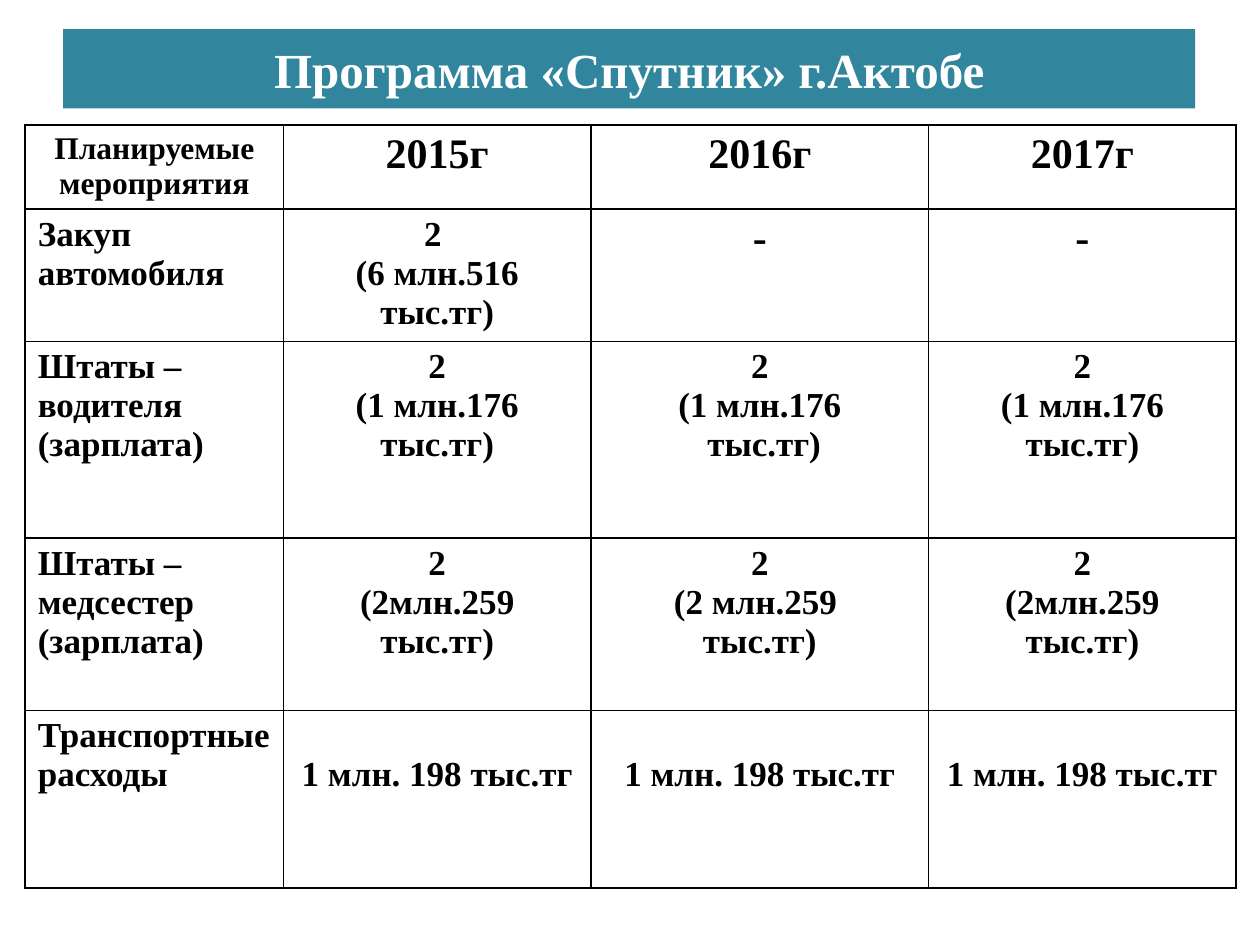
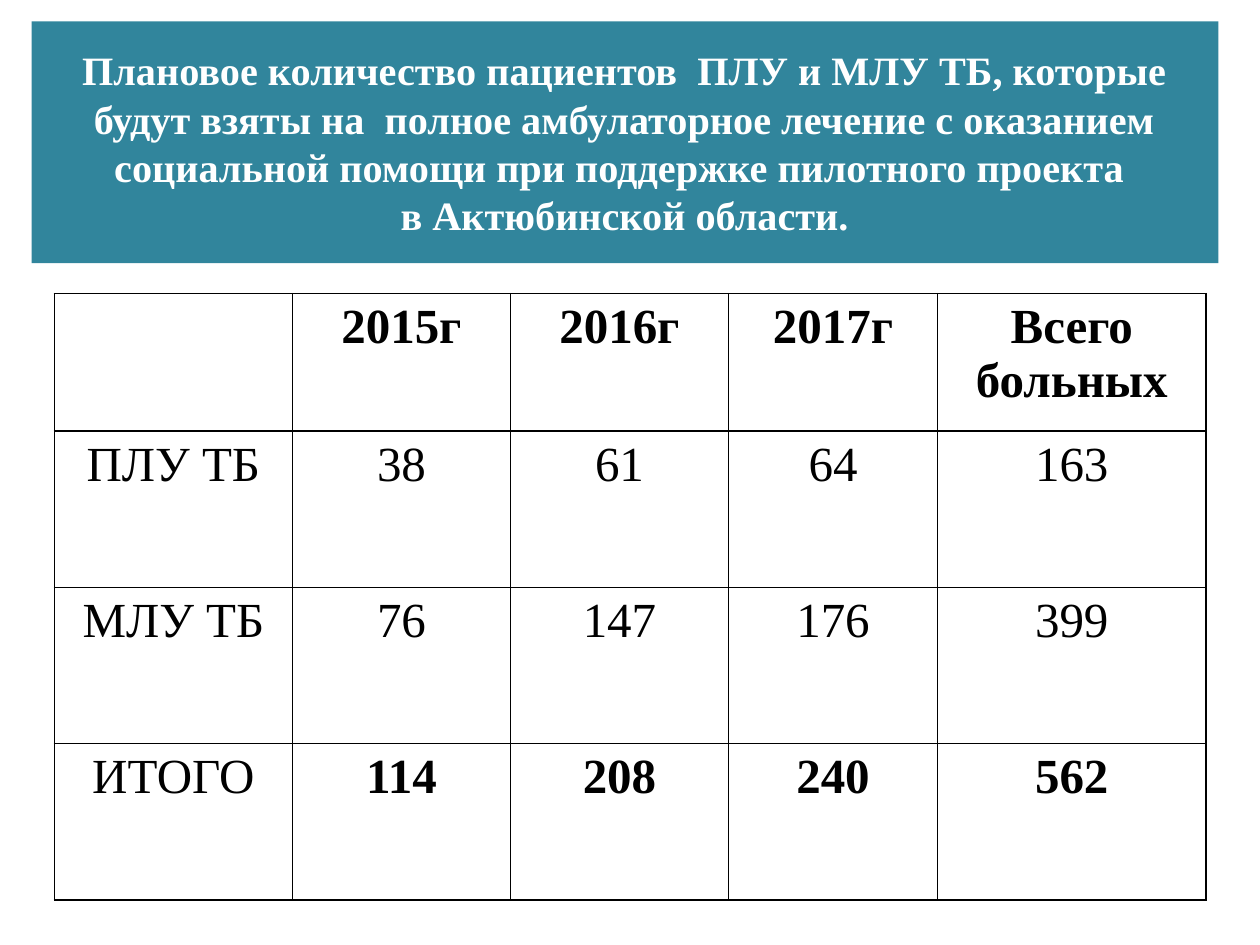
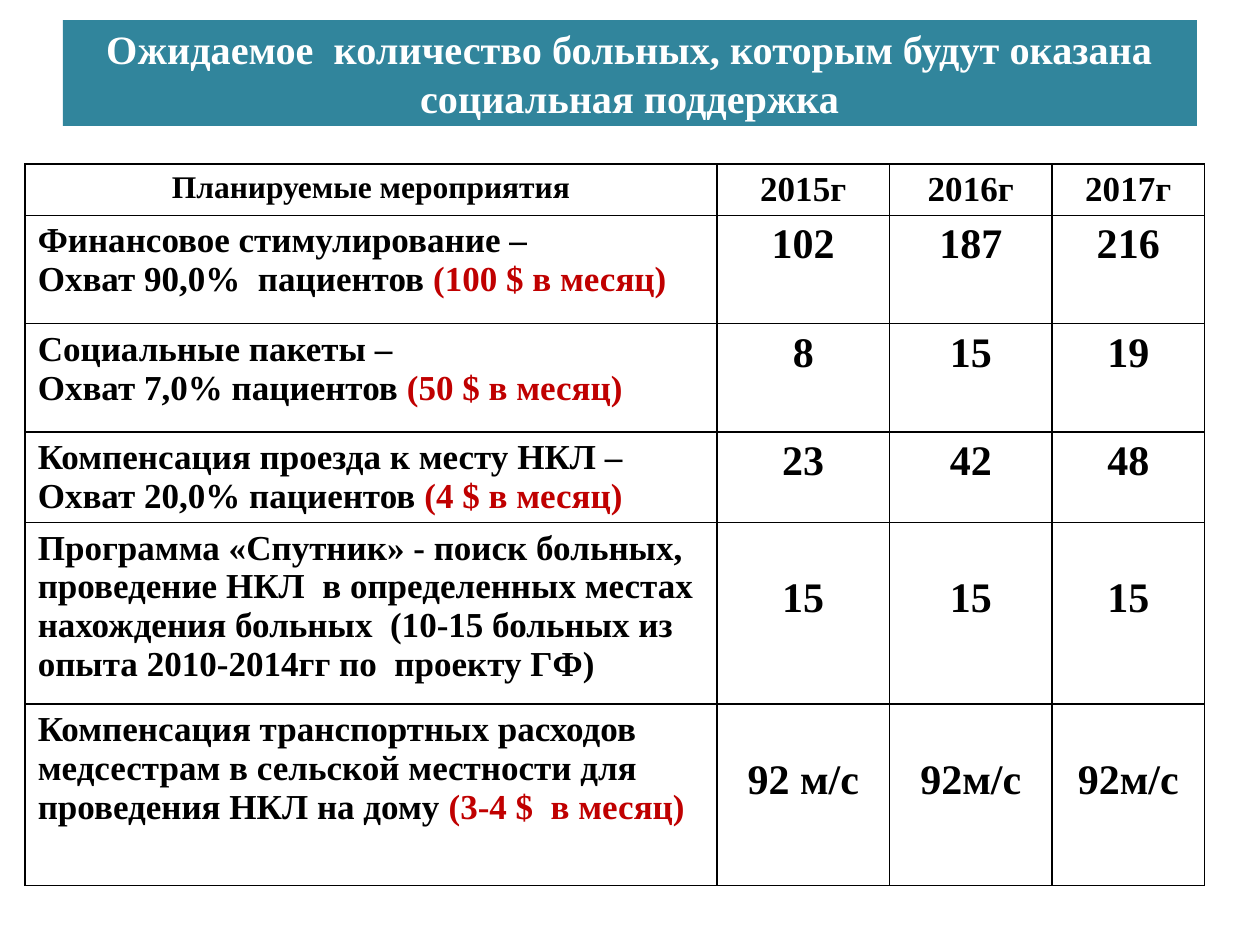
from dataclasses import dataclass

from lxml.etree import SubElement
from pptx import Presentation
from pptx.dml.color import RGBColor
from pptx.enum.shapes import MSO_SHAPE
from pptx.enum.text import MSO_ANCHOR, PP_ALIGN
from pptx.oxml.ns import qn
from pptx.util import Pt


# Theme
@dataclass(frozen=True)
class Theme:
    font: str = "Times New Roman"
    band: RGBColor = RGBColor(0x31, 0x85, 0x9C)
    title: RGBColor = RGBColor(0xFF, 0xFF, 0xFF)
    text: RGBColor = RGBColor(0, 0, 0)
    accent: RGBColor = RGBColor(0xC0, 0, 0)
    border: str = "000000"
    border_width: float = 1
    line_height: float = 1.11
    small: int = 18
    body: int = 20
    title_long: int = 23
    large: int = 24
    huge: int = 28


THEME = Theme()


# Slide parts
@dataclass(frozen=True)
class Box:
    left: float
    top: float
    width: float
    height: float


@dataclass(frozen=True)
class Band:
    text: str
    size: int
    box: Box


@dataclass(frozen=True)
class Cell:
    text: str
    size: int = THEME.body
    bold: bool = True
    align: PP_ALIGN = PP_ALIGN.CENTER
    accent: str = ""     # coloured ending of the last paragraph
    lowered: bool = False  # starts one line further down


@dataclass(frozen=True)
class Grid:
    left: float
    top: float
    cols: list[float]
    rows: list[float]
    cells: list[list[Cell]]


@dataclass(frozen=True)
class Page:
    band: Band
    grid: Grid


def label(text: str, accent: str = "") -> Cell:
    return Cell(text, align=PP_ALIGN.LEFT, accent=accent)


def row_of(*texts: str, size: int = THEME.body, bold: bool = True,
           lowered: bool = False) -> list[Cell]:
    return [Cell(t, size, bold, lowered=lowered) for t in texts]


# Drawing
def style_run(r, size: int, bold: bool, color: RGBColor) -> None:
    r.font.name = THEME.font
    r.font.size = Pt(size)
    r.font.bold = bold
    r.font.color.rgb = color


def draw_band(s, band: Band) -> None:
    b = band.box
    sp = s.shapes.add_shape(MSO_SHAPE.RECTANGLE, Pt(b.left), Pt(b.top),
                            Pt(b.width), Pt(b.height))
    sp.shadow.inherit = False
    sp.fill.solid()
    sp.fill.fore_color.rgb = THEME.band
    sp.line.fill.background()
    tf = sp.text_frame
    tf.word_wrap = True
    tf.vertical_anchor = MSO_ANCHOR.MIDDLE
    tf.text = band.text
    for p in tf.paragraphs:
        p.alignment = PP_ALIGN.CENTER
        for r in p.runs:
            style_run(r, band.size, True, THEME.title)


def draw_borders(cell) -> None:
    props = cell._tc.get_or_add_tcPr()
    for i, side in enumerate(("lnL", "lnR", "lnT", "lnB")):
        ln = props.makeelement(qn(f"a:{side}"), {"w": str(Pt(THEME.border_width))})
        fill = SubElement(ln, qn("a:solidFill"))
        SubElement(fill, qn("a:srgbClr"), val=THEME.border)
        props.insert(i, ln)


def draw_cell(cell, content: Cell) -> None:
    cell.fill.background()
    draw_borders(cell)
    if content.lowered:
        cell.margin_top += Pt(content.size * THEME.line_height)
    tf = cell.text_frame
    tf.text = content.text
    for p in tf.paragraphs:
        p.alignment = content.align
        for r in p.runs:
            style_run(r, content.size, content.bold, THEME.text)
    if content.accent:
        r = tf.paragraphs[-1].add_run()
        r.text = content.accent
        style_run(r, content.size, content.bold, THEME.accent)


def draw_grid(s, grid: Grid) -> None:
    frame = s.shapes.add_table(len(grid.rows), len(grid.cols), Pt(grid.left),
                               Pt(grid.top), Pt(sum(grid.cols)), Pt(sum(grid.rows)))
    table = frame.table
    for col, width in zip(table.columns, grid.cols):
        col.width = Pt(width)
    for row, height, contents in zip(table.rows, grid.rows, grid.cells):
        row.height = Pt(height)
        for cell, content in zip(row.cells, contents):
            draw_cell(cell, content)


# Content
YEARS = ("2015г", "2016г", "2017г")
ACTIVITIES = Cell("Планируемые мероприятия", THEME.small)

SPUTNIK = Page(
    Band("Программа «Спутник» г.Актобе", THEME.huge, Box(36, 16.6, 647, 45.4)),
    Grid(14.4, 71.3, [147.6, 175.7, 193, 175.7], [48.2, 75.6, 112.3, 98.6, 101.5], [
        [ACTIVITIES, *row_of(*YEARS, size=THEME.large)],
        [label("Закуп автомобиля"), Cell("2 \n(6 млн.516 тыс.тг)"),
         *row_of("-", "-", size=THEME.large)],
        [label("Штаты – водителя\n(зарплата)"),
         *row_of("2\n(1 млн.176 тыс.тг)", "2\n(1 млн.176\n тыс.тг)",
                 "2\n(1 млн.176 тыс.тг)")],
        [label("Штаты – медсестер\n(зарплата)"),
         *row_of("2\n(2млн.259\nтыс.тг)", "2\n(2 млн.259 \nтыс.тг)",
                 "2\n(2млн.259\nтыс.тг)")],
        [label("Транспортные расходы"),
         *row_of(*["1 млн. 198 тыс.тг"] * 3, lowered=True)],
    ]),
)

PATIENTS = Page(
    Band("Плановое количество пациентов  ПЛУ и МЛУ ТБ, которые будут взяты на  "
         "полное амбулаторное лечение с оказанием социальной помощи при поддержке "
         "пилотного проекта \vв Актюбинской области.",
         THEME.title_long, Box(18, 12.2, 678.2, 138.2)),
    Grid(31, 167.8, [136.1, 124.6, 124.6, 119.5, 153.4], [78.5] + [89.3] * 3, [
        row_of("", *YEARS, "Всего больных", size=THEME.huge),
        row_of("ПЛУ ТБ", "38", "61", "64", "163", size=THEME.huge, bold=False),
        row_of("МЛУ ТБ", "76", "147", "176", "399", size=THEME.huge, bold=False),
        [Cell("ИТОГО", THEME.huge, bold=False),
         *row_of("114", "208", "240", "562", size=THEME.huge)],
    ]),
)

SUPPORT = Page(
    Band("Ожидаемое  количество больных, которым будут оказана социальная поддержка",
         THEME.title_long, Box(36, 11.5, 648, 60.5)),
    Grid(14.4, 93.6, [395.3, 98.6, 92.9, 87.1],
         [26.6, 61.9, 61.9, 51.8, 103.7, 103.7], [
        [ACTIVITIES, *row_of(*YEARS)],
        [label("Финансовое стимулирование –\nОхват 90,0%  пациентов ",
               "(100 $ в месяц)"),
         *row_of("102", "187", "216", size=THEME.large)],
        [label("Cоциальные пакеты –\nОхват 7,0% пациентов ", "(50 $ в месяц)"),
         *row_of("8", "15", "19", size=THEME.large)],
        [label("Компенсация проезда к месту НКЛ –\nОхват 20,0% пациентов ",
               "(4 $ в месяц)"),
         *row_of("23", "42", "48", size=THEME.large)],
        [label("Программа «Спутник» - поиск больных, проведение НКЛ  в определенных "
               "местах нахождения больных  (10-15 больных из опыта 2010-2014гг по  "
               "проекту ГФ)"),
         *row_of("15", "15", "15", size=THEME.large, lowered=True)],
        [label("Компенсация транспортных расходов медсестрам в сельской местности "
               "для проведения НКЛ на дому ", "(3-4 $  в месяц)"),
         *row_of("92 м/с", "92м/с", "92м/с", size=THEME.large, lowered=True)],
    ]),
)


def main() -> None:
    prs = Presentation()
    prs.slide_width, prs.slide_height = Pt(720), Pt(540)
    for page in (SPUTNIK, PATIENTS, SUPPORT):
        s = prs.slides.add_slide(prs.slide_layouts[6])
        draw_band(s, page.band)
        draw_grid(s, page.grid)
    prs.save("out.pptx")


if __name__ == "__main__":
    main()
